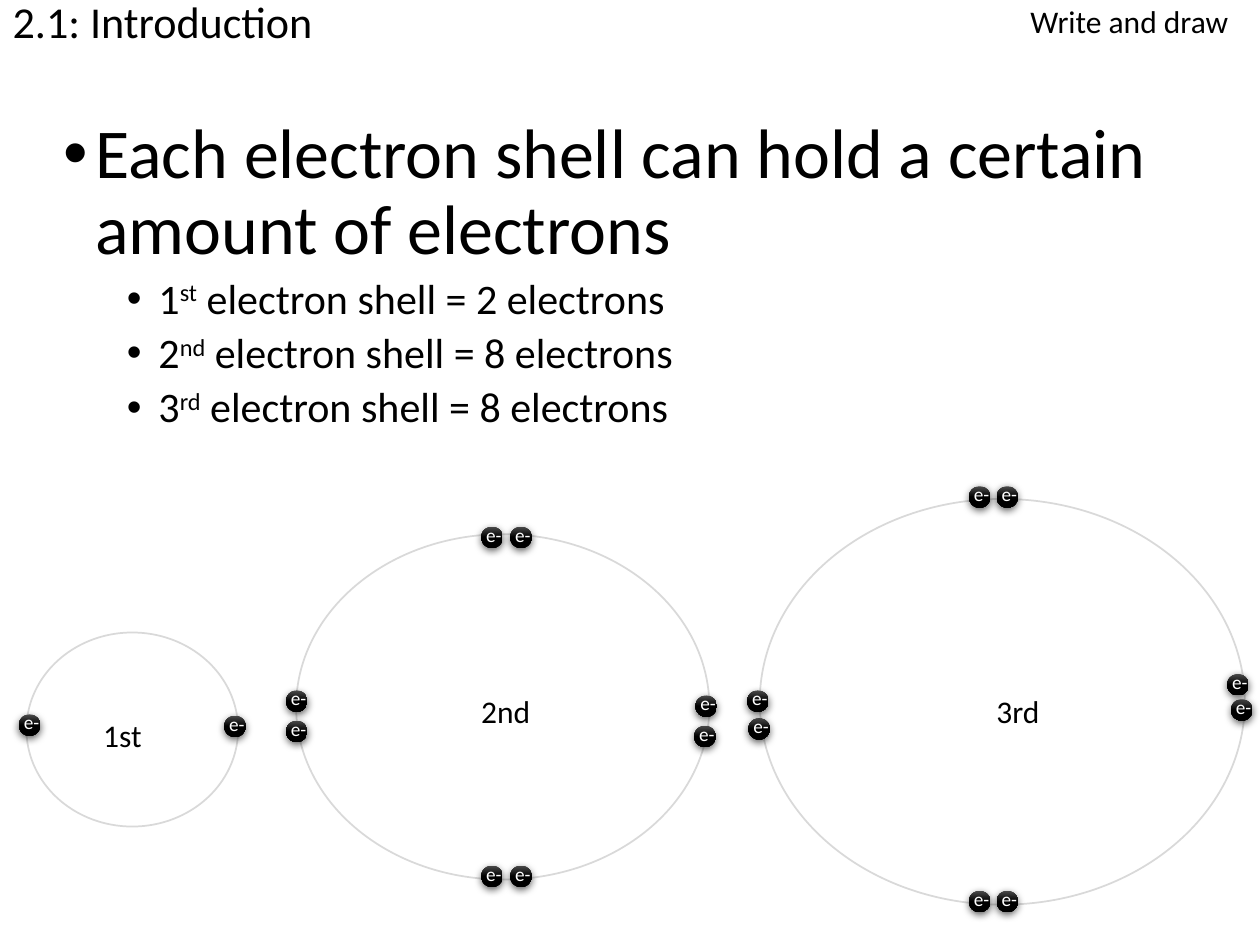
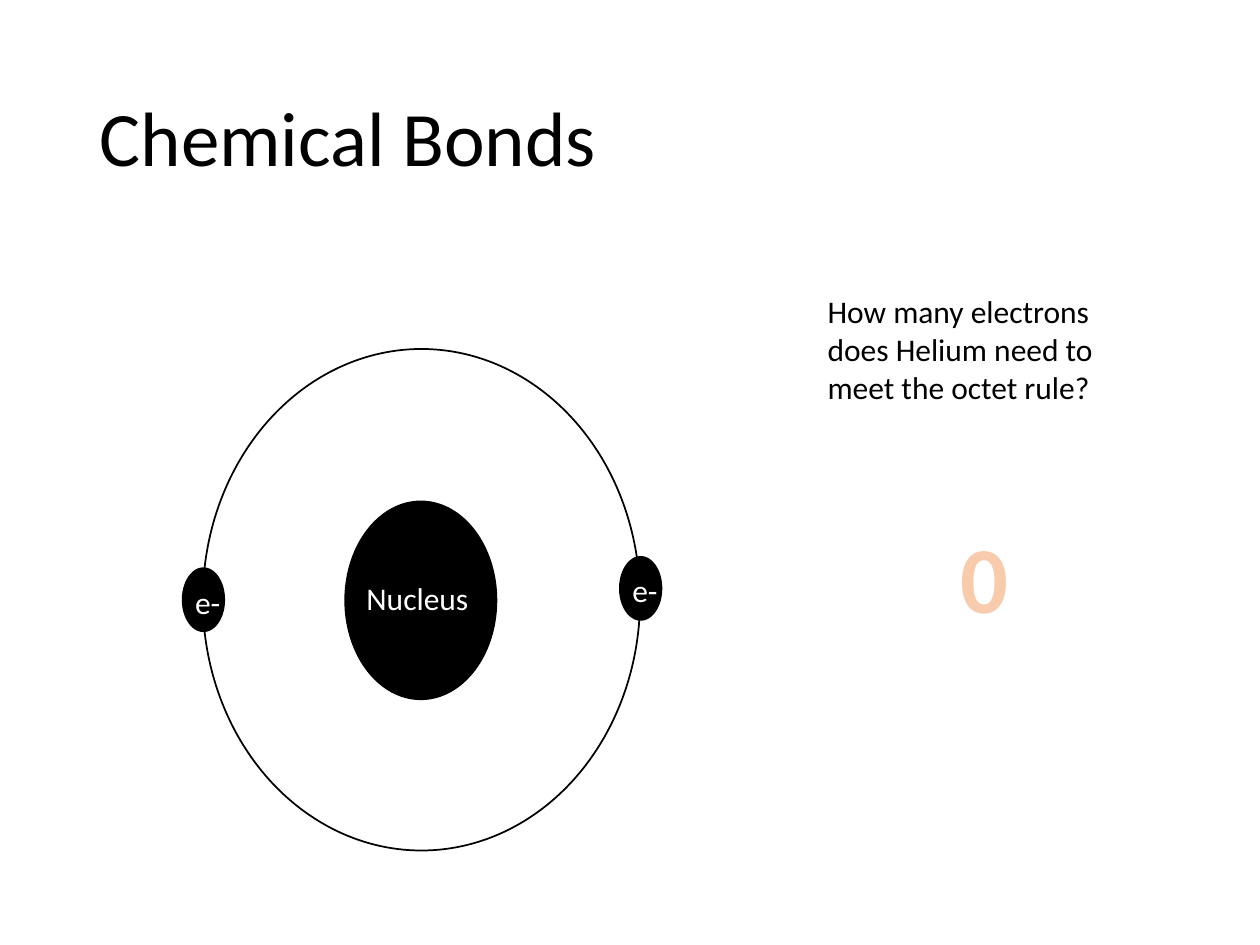
from itertools import product

from lxml import etree
from pptx import Presentation
from pptx import util as u
from pptx.dml.color import RGBColor
from pptx.enum import shapes, text
from pptx.oxml import ns

BLACK, WHITE, RING_GREY, PEACH = "000000", "FFFFFF", "D9D9D9", "F8CBAD"
COLUMNS, ROWS = 100, 75


def colour(code):
    return RGBColor.from_string(code)


class Deck:
    """Holds the style, the grid and the current slide."""
    font = "Calibri"
    line_width = u.Pt(1)

    def __init__(self):
        self.deck = Presentation()
        self.deck.slide_width, self.deck.slide_height = u.Inches(10), u.Inches(7.5)
        self.column = self.deck.slide_width / COLUMNS
        self.row = self.deck.slide_height / ROWS
        self.slide = None

    def place(self, left, top, width, height):
        return [round(n * unit) for n, unit in
                zip((left, top, width, height), (self.column, self.row) * 2)]

    def run(self, paragraph, words, size, ink=BLACK, bold=False, raised=False):
        run = paragraph.add_run()
        run.text = words
        run.font.name, run.font.size, run.font.bold = self.font, u.Pt(size), bold
        run.font.color.rgb = colour(ink)
        if raised:
            run._r.get_or_add_rPr().set("baseline", "30000")

    def new_slide(self, title, box, size):
        self.slide = self.deck.slides.add_slide(self.deck.slide_layouts[5])
        heading = self.slide.shapes.title
        heading.left, heading.top, heading.width, heading.height = self.place(*box)
        frame = heading.text_frame
        frame.auto_size = text.MSO_AUTO_SIZE.NONE
        frame.vertical_anchor = text.MSO_ANCHOR.MIDDLE
        paragraph = frame.paragraphs[0]
        paragraph.alignment = text.PP_ALIGN.LEFT
        paragraph.line_spacing = 0.9
        self.run(paragraph, title, size)

    def frame(self, box, wrap=True):
        frame = self.slide.shapes.add_textbox(*self.place(*box)).text_frame
        frame.word_wrap = wrap
        return frame

    def label(self, words, box, size=18, ink=BLACK, bold=False, centred=False):
        paragraph = self.frame(box, wrap=not centred).paragraphs[0]
        if centred:
            paragraph.alignment = text.PP_ALIGN.CENTER
        self.run(paragraph, words, size, ink, bold)

    def bullet(self, paragraph, margin, before):
        """Hanging bullet, with the margin in columns."""
        props = paragraph._p.get_or_add_pPr()
        props.set("marL", str(round(margin * self.column)))
        props.set("indent", str(round(-2.5 * self.column)))
        etree.SubElement(props, ns.qn("a:buFont")).set("typeface", "Arial")
        etree.SubElement(props, ns.qn("a:buChar")).set("char", "•")
        paragraph.line_spacing = 0.9
        paragraph.space_before = u.Pt(before)

    def oval(self, box, fill=None, line=None):
        oval = self.slide.shapes.add_shape(shapes.MSO_SHAPE.OVAL, *self.place(*box))
        oval.shadow.inherit = False
        if fill:
            oval.fill.solid()
            oval.fill.fore_color.rgb = colour(fill)
        else:
            oval.fill.background()
        if line:
            oval.line.color.rgb = colour(line)
            oval.line.width = self.line_width
        else:
            oval.line.fill.background()
        return oval

    def glossy_electron(self, left, top):
        """Small shaded dot with a soft shadow below it."""
        dot = self.oval((left, top, 1.7, 1.7))
        dot.fill.gradient()
        dot.fill.gradient_angle = 270
        for stop, (position, shade) in zip(dot.fill.gradient_stops,
                                           ((0, "4B4B4B"), (0.5, BLACK))):
            stop.position, stop.color.rgb = position, colour(shade)
        effects = dot._element.spPr.find(ns.qn("a:effectLst"))
        shadow = etree.SubElement(effects, ns.qn("a:outerShdw"), blurRad=str(u.Pt(4.5)),
                                  dist=str(u.Pt(1.5)), dir="5400000", rotWithShape="0")
        tint = etree.SubElement(shadow, ns.qn("a:srgbClr"), val=BLACK)
        etree.SubElement(tint, ns.qn("a:alpha"), val="63000")
        self.label("e-", (left - 0.6, top - 0.8, 4.5, 2.9), 11, WHITE)

    def flat_electron(self, left, top):
        self.oval((left, top, 3.3, 5), BLACK, BLACK)
        self.label("e-", (left, top + 0.65, 5.7, 4), ink=WHITE)


def electron_shells(deck):
    deck.new_slide("2.1: Introduction", (0, 0, 86.2, 3.8), 25.2)

    # Capacity of each shell
    capacity = deck.frame((4.1, 8.9, 97, 64))
    rule = capacity.paragraphs[0]
    deck.bullet(rule, 2.5, 0)
    deck.run(rule, "Each electron shell can hold a certain amount of electrons", 40)
    for number, ending, electrons in ((1, "st", 2), (2, "nd", 8), (3, "rd", 8)):
        item = capacity.add_paragraph()
        item.level = 1
        deck.bullet(item, 7.5, 5)
        deck.run(item, str(number), 24)
        deck.run(item, ending, 24, raised=True)
        deck.run(item, f" electron shell = {electrons} electrons", 24)
    deck.label("Write and draw", (80.8, -0.3, 19.6, 4))

    # Rings with their electrons: pairs above and below, then the sides
    shells = (
        ((2.1, 50.2, 16.8, 15.4), [(1.5, 56.7), (17.8, 56.8)]),
        ((23.5, 42.4, 32.8, 27.4), [*product((38.2, 40.5), (41.8, 68.7)),
                                    (22.7, 57.2), (22.7, 54.8),
                                    (55.1, 57.6), (55.2, 55.2)]),
        ((60.3, 39.6, 38.5, 32.2), [*product((76.9, 79.1), (38.6, 70.7)),
                                    (59.4, 57), (59.3, 54.8),
                                    (97.7, 55.5), (97.4, 53.5)]),
    )
    for ring, electrons in shells:
        deck.oval(ring, line=RING_GREY)
        for left, top in electrons:
            deck.glossy_electron(left, top)
    for name, left, top in (("1st", 7.2, 56.3), ("2nd", 37.2, 54.4), ("3rd", 78.1, 54.4)):
        deck.label(name, (left, top, 7.4, 4))


def chemical_bonds(deck):
    deck.new_slide("Chemical Bonds", (6.9, 4, 86.2, 14.5), 44)

    # Helium atom
    deck.oval((27.4, 39.8, 12, 15.7), BLACK, BLACK)
    deck.oval((16.1, 27.7, 34.7, 39.8), line=BLACK)
    deck.label("Nucleus", (28.1, 45.5, 10.5, 4), ink=WHITE)
    for left, top in ((14.5, 45.1), (49.2, 44.2)):
        deck.flat_electron(left, top)

    # Question and answer
    deck.label("How many electrons does Helium need to meet the octet rule?",
               (64.7, 22.7, 26.7, 10.1))
    deck.label("0", (75.2, 40.7, 5.9, 10.1), 54, PEACH, bold=True, centred=True)


def main():
    deck = Deck()
    electron_shells(deck)
    chemical_bonds(deck)
    deck.deck.save("out.pptx")


if __name__ == "__main__":
    main()
